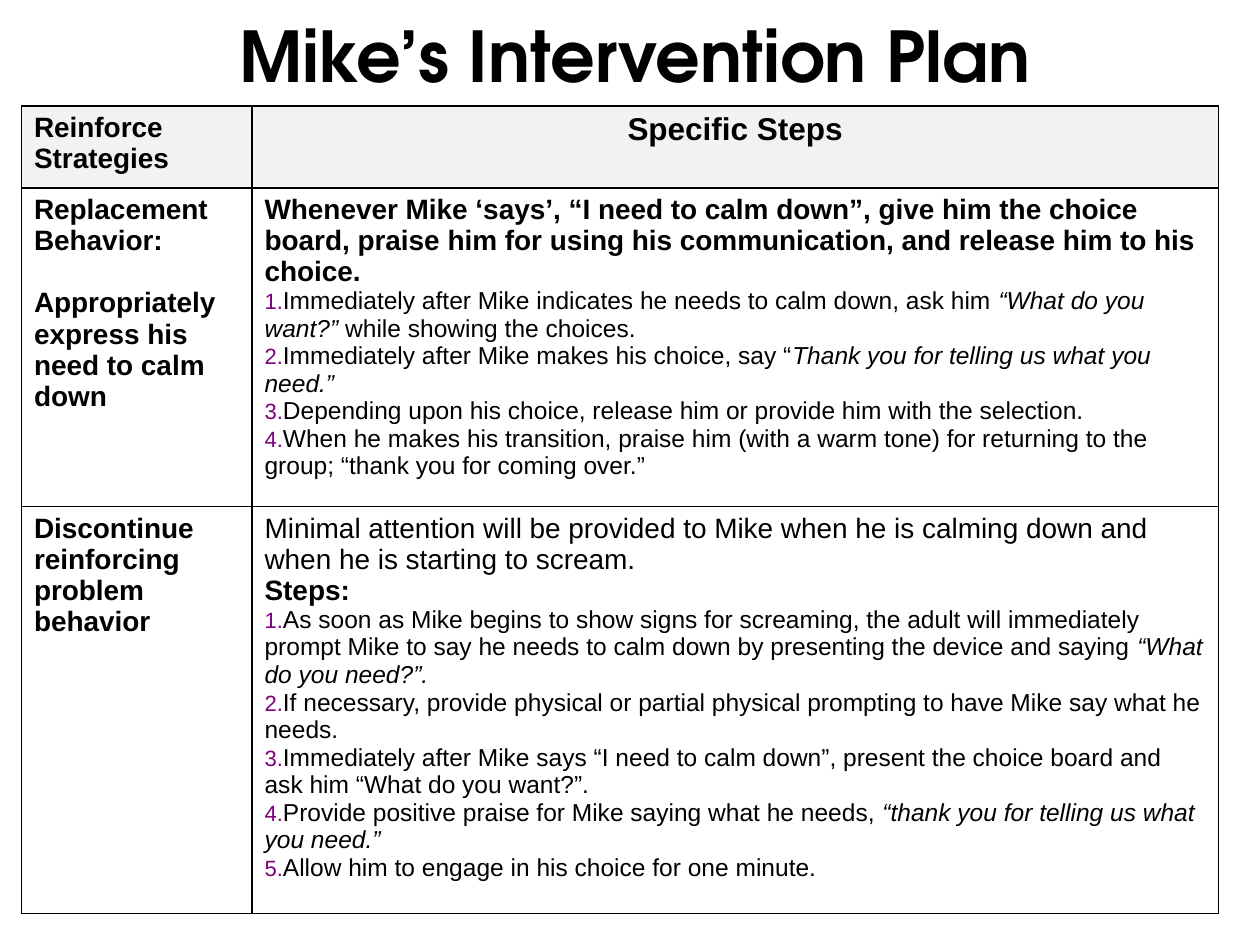
from lxml.etree import SubElement
from pptx import Presentation
from pptx.dml.color import RGBColor
from pptx.enum.text import MSO_ANCHOR, PP_ALIGN
from pptx.oxml.ns import qn
from pptx.util import Pt

PX = 9144
COLORS = {"ink": "000000", "head": "F2F2F2", "body": "FFFFFF", "number": "800080"}
COLS = [183, 767]
ROWS = [65, 253, 323]

LEFT = [
    ["Reinforce Strategies"],
    ["Replacement Behavior:", "Appropriately express his need to calm down"],
    ["Discontinue reinforcing problem behavior"],
]
LEADS = [
    [("Whenever Mike ‘says’, “I need to calm down”, give him the choice board, "
      "praise him for using his communication, and release him to his choice.", True)],
    [("Minimal attention will be provided to Mike when he is calming down and "
      "when he is starting to scream.", False),
     ("Steps:", True)],
]
STEPS = [
    [["Immediately after Mike indicates he needs to calm down, ask him ",
      "“What do you want?”", " while showing the choices."],
     ["Immediately after Mike makes his choice, say “",
      "Thank you for telling us what you need.”"],
     ["Depending upon his choice, release him or provide him with the selection."],
     ["When he makes his transition, praise him (with a warm tone) for returning "
      "to the group; “thank you for coming over.”"]],
    [["As soon as Mike begins to show signs for screaming, the adult will "
      "immediately prompt Mike to say he needs to calm down by presenting the "
      "device and saying ", "“What do you need?”."],
     ["If necessary, provide physical or partial physical prompting to have Mike "
      "say what he needs."],
     ["Immediately after Mike says “I need to calm down”, present the choice "
      "board and ask him “What do you want?”."],
     ["Provide positive praise for Mike saying what he needs, ",
      "“thank you for telling us what you need.”"],
     ["Allow him to engage in his choice for one minute."]],
]


def style(run, size, bold=False, italic=False, face="Arial"):
    """Set the font of one run."""
    font = run.font
    font.name, font.size, font.bold, font.italic = face, Pt(size), bold, italic
    font.color.rgb = RGBColor.from_string(COLORS["ink"])


def add_para(frame, parts, size, bold=False):
    """Add a paragraph whose every second part is italic."""
    para = frame.paragraphs[0]
    if para.runs:
        para = frame.add_paragraph()
    for i, text in enumerate(parts):
        run = para.add_run()
        run.text = text
        style(run, size, bold, i % 2 == 1)
    return para


def number(para):
    """Number a paragraph with a coloured numeral."""
    props = para._p.get_or_add_pPr()
    props.set("marL", "0")
    props.set("indent", "0")
    tint = SubElement(props, qn("a:buClr"))
    SubElement(tint, qn("a:srgbClr"), val=COLORS["number"])
    SubElement(props, qn("a:buSzPct"), val="90000")
    SubElement(props, qn("a:buFont"), typeface="Arial")
    SubElement(props, qn("a:buAutoNum"), type="arabicPeriod")
    tabs = SubElement(props, qn("a:tabLst"))
    SubElement(tabs, qn("a:tab"), pos=str(20 * PX), algn="l")


def paint(cell, color):
    """Give a cell its borders and fill."""
    props = cell._tc.get_or_add_tcPr()
    for side in ("lnL", "lnR", "lnT", "lnB"):
        line = SubElement(props, qn(f"a:{side}"), w=str(Pt(1)))
        fill = SubElement(line, qn("a:solidFill"))
        SubElement(fill, qn("a:srgbClr"), val=COLORS["ink"])
    cell.fill.solid()
    cell.fill.fore_color.rgb = RGBColor.from_string(COLORS[color])


def add_plan(slide, x, y, w, h):
    """Draw the table of strategies and steps."""
    shape = slide.shapes.add_table(len(ROWS), len(COLS), x * PX, y * PX, w * PX, h * PX)
    table = shape.table
    table.first_row = table.horz_banding = False
    for col, width in zip(table.columns, COLS):
        col.width = width * PX
    for row, height in zip(table.rows, ROWS):
        row.height = height * PX
    for r, texts in enumerate(LEFT):
        for c in range(len(COLS)):
            paint(table.cell(r, c), "body" if r else "head")
        for i, text in enumerate(texts):
            para = add_para(table.cell(r, 0).text_frame, [text], 16, True)
            if i:
                para.space_before = Pt(18)
    head = add_para(table.cell(0, 1).text_frame, ["Specific Steps"], 18, True)
    head.alignment = PP_ALIGN.CENTER
    for r, (leads, steps) in enumerate(zip(LEADS, STEPS), 1):
        frame = table.cell(r, 1).text_frame
        for text, bold in leads:
            add_para(frame, [text], 16, bold)
        for parts in steps:
            number(add_para(frame, parts, 14))


def add_title(slide, x, y, w, h):
    """Draw the centred slide title."""
    frame = slide.shapes.add_textbox(x * PX, y * PX, w * PX, h * PX).text_frame
    frame.word_wrap = True
    frame.vertical_anchor = MSO_ANCHOR.MIDDLE
    para = frame.paragraphs[0]
    para.text = "Mike’s Intervention Plan"
    para.alignment = PP_ALIGN.CENTER
    style(para.runs[0], 40, True, face="TeX Gyre Adventor")


def main():
    """Build and save the slide."""
    deck = Presentation()
    deck.slide_width, deck.slide_height = 1000 * PX, 750 * PX
    slide = deck.slides.add_slide(deck.slide_layouts[6])
    add_plan(slide, 17, 84, sum(COLS), sum(ROWS))
    add_title(slide, 50, 3, 908, 81)
    deck.save("out.pptx")


if __name__ == "__main__":
    main()
